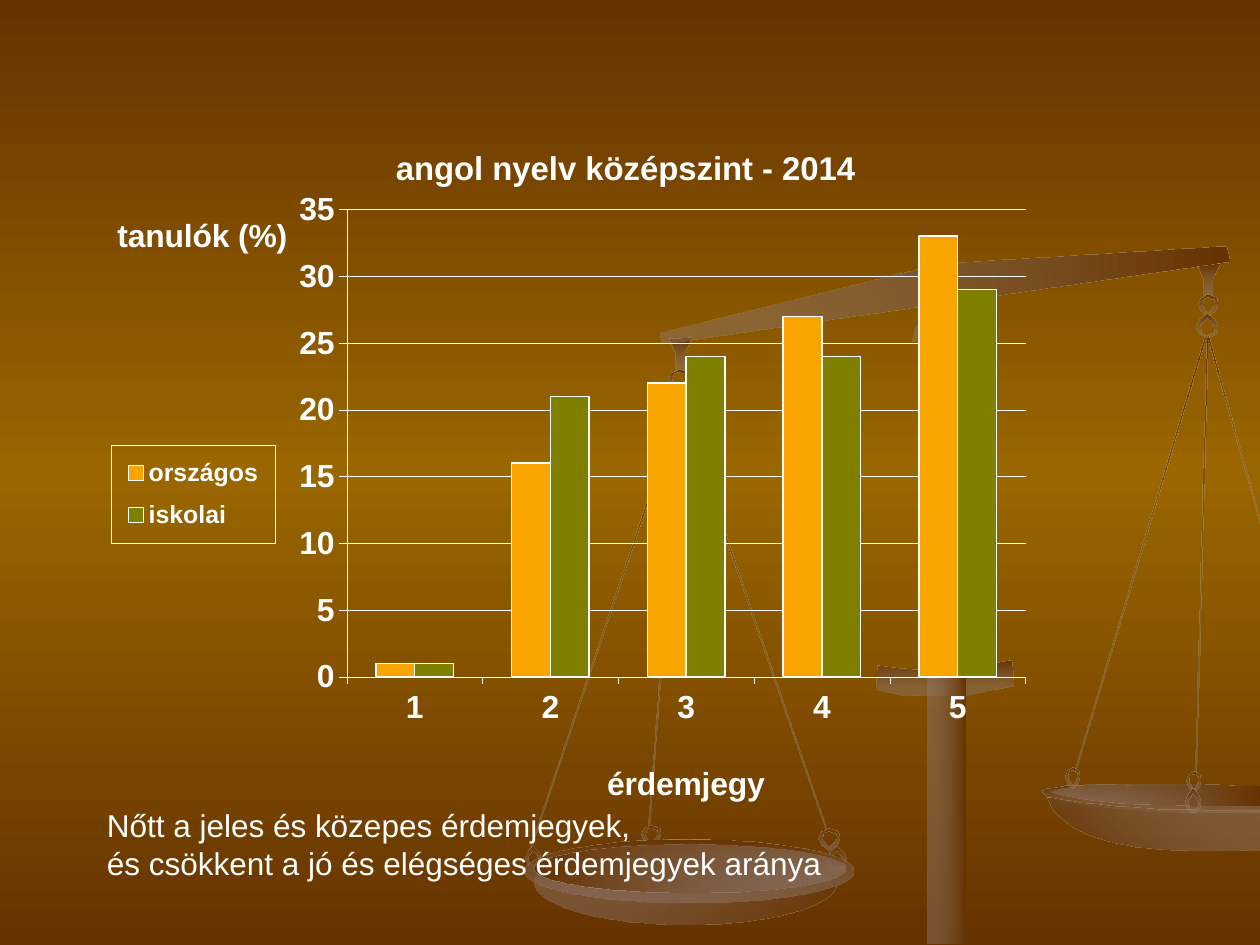
from copy import deepcopy
from dataclasses import dataclass

from lxml.etree import SubElement
from pptx import Presentation
from pptx.chart.data import CategoryChartData
from pptx.dml.color import RGBColor
from pptx.enum.chart import XL_CHART_TYPE, XL_LEGEND_POSITION, XL_TICK_LABEL_POSITION, XL_TICK_MARK
from pptx.enum.shapes import MSO_SHAPE
from pptx.enum.text import MSO_AUTO_SIZE
from pptx.oxml import parse_xml
from pptx.oxml.ns import nsdecls, qn
from pptx.util import Cm, Pt


@dataclass(frozen=True)
class Theme:
    font: str = "Arial"
    text: str = "FFFFFF"
    dark: str = "663300"
    middle: str = "996600"
    light: str = "937F79"
    light_alpha: int = 40000
    national: str = "F8A500"
    school: str = "808000"
    chart_size: float = 15.5
    title_size: float = 18.8
    axis_size: float = 18.2
    legend_size: float = 14.2
    note_size: float = 18
    hairline: float = 0.21
    bar_line: float = 0.84


LINK_OUTER = [(.5, 1), (.85, .75), (1, .4), (.9, .15), (.5, 0), (.15, .15), (0, .45), (.15, .75)]
LINK_INNER = [(.5, .12), (.82, .25), (.85, .45), (.5, .82), (.18, .5), (.25, .2)]
HOOK = [(.18, 0), (0, .01), (.05, .13), (.05, .27), (.12, .27), (.12, .12)]

# Chain links: left, top, width, height, point at the bottom
LINKS = [
    (8.46, 6.09, .11, .17, True), (5.31, 2.93, .16, .17, True), (5.31, 3.07, .16, .19, False),
    (9.51, 2.34, .15, .17, True), (9.5, 2.49, .16, .19, False), (9.42, 6.12, .11, .17, True),
    (5.09, 6.55, .15, .16, True), (6.56, 6.72, .16, .19, False), (4.17, 6.72, .12, .16, False),
]
FRONT_LINKS = [(6.5, 6.58, .16, .17, True), (9.41, 6.26, .12, .19, False)]
# Cords: left, top, height, rotation
CORDS = [(9.04, 2.6, 3.6, 16.6), (9.53, 2.66, 3.47, 1.5), (9.79, 2.64, 1.53, 344.6),
         (5.98, 3.15, 3.53, 341), (4.79, 3.16, 3.68, 18.6), (5.27, 3.25, 3.31, 4.2)]
COLLAR = [(6.97, 5.28), (7.24, 5.31), (7.39, 5.31), (7.57, 5.3), (7.78, 5.28), (8.02, 5.24),
          (8.04, 5.44), (7.82, 5.48), (7.68, 5.51), (7.51, 5.52), (7.33, 5.52), (7.14, 5.51), (6.96, 5.47)]
PAN_RIM = [(9.58, 6.24), (8.97, 6.24), (8.75, 6.23), (8.46, 6.24), (8.31, 6.26), (8.27, 6.28),
           (8.32, 6.33), (8.42, 6.36), (8.63, 6.39), (8.94, 6.42), (9.35, 6.44), (9.58, 6.45),
           (10, 6.45), (10, 6.26), (9.8, 6.26)]
PAN_BOWL = [(8.31, 6.33), (8.35, 6.42), (8.42, 6.49), (8.52, 6.57), (8.65, 6.63), (8.82, 6.68),
            (9.03, 6.72), (9.28, 6.74), (9.57, 6.75), (9.8, 6.75), (10, 6.74), (10, 6.43),
            (9.53, 6.43), (9.18, 6.42), (8.86, 6.4), (8.57, 6.37)]
PAN_INSIDE = [(9.56, 6.23), (8.62, 6.23), (8.43, 6.26), (8.34, 6.28), (8.43, 6.31), (8.63, 6.34),
              (8.93, 6.37), (9.33, 6.38), (9.55, 6.39), (10, 6.39), (10, 6.24), (9.79, 6.24)]
BEAM = [(9.73, 1.96), (9.76, 2.08), (5.25, 2.73), (5.24, 2.64), (7.37, 2.12), (7.59, 2.09)]
POINTER = [(7.91, 5.39), (7.5, 2.8), (7.5, 2.76), (7.48, 2.68), (7.6, 2.65), (7.61, 2.74), (7.63, 2.77)]
HUB = [(7.52, 2.47), (7.63, 2.48), (7.72, 2.53), (7.77, 2.6), (7.79, 2.71), (7.24, 2.71),
       (7.26, 2.6), (7.32, 2.53), (7.4, 2.48)]


def length(inches):
    """Turn a place on the 10 by 7.5 inch grid into a length."""
    return Cm(inches * 2.54)


def colour(code):
    return RGBColor.from_string(code)


class Slide:
    def __init__(self, deck, theme):
        self.theme = theme
        self.page = deck.slides.add_slide(deck.slide_layouts[6])
        self.scale_art = self.page.shapes.add_group_shape().shapes

    def gradient(self, fill, element, colours, angle):
        """Spread the colours evenly; the angle runs clockwise."""
        fill.gradient()
        fill.gradient_angle = -angle % 360
        stop_list = next(element.iter(qn("a:gsLst")))
        while len(stop_list) < len(colours):
            stop_list.append(deepcopy(stop_list[-1]))
        for index, (stop, code) in enumerate(zip(fill.gradient_stops, colours)):
            stop.color.rgb = colour(code)
            stop.position = index / (len(colours) - 1)
        for tone in stop_list.iter(qn("a:srgbClr")):
            if tone.get("val") == self.theme.light:
                SubElement(tone, qn("a:alpha")).set("val", str(self.theme.light_alpha))

    def background(self):
        theme = self.theme
        fill = self.page.background.fill
        self.gradient(fill, self.page.element, [theme.dark, theme.middle, theme.dark], 90)

    def metal(self, shape, angle, from_light):
        tones = [self.theme.dark, self.theme.light]
        self.gradient(shape.fill, shape.element, tones[::-1] if from_light else tones, angle)
        shape.line.fill.background()
        shape.shadow.inherit = False

    def preset(self, kind, box, angle=90, from_light=False, rotation=0):
        shape = self.scale_art.add_shape(kind, *map(length, box))
        shape.rotation = rotation
        self.metal(shape, angle, from_light)

    def outline(self, *contours, angle=90, from_light=False):
        contours = [[(length(x), length(y)) for x, y in points] for points in contours]
        builder = self.scale_art.build_freeform(*contours[0][0])
        builder.add_line_segments(contours[0][1:])
        for points in contours[1:]:
            builder.move_to(*points[0])
            builder.add_line_segments(points[1:])
        self.metal(builder.convert_to_shape(), angle, from_light)

    def link(self, left, top, width, height, point_down):
        self.outline(*[[(left + x * width, top + (y if point_down else 1 - y) * height)
                        for x, y in points] for points in (LINK_OUTER, LINK_INNER)])

    def style_font(self, font, size, bold=True):
        font.name, font.size, font.bold = self.theme.font, Pt(size), bold
        font.color.rgb = colour(self.theme.text)

    def style_line(self, line, width):
        line.color.rgb, line.width = colour(self.theme.text), Pt(width)

    def chart_title(self, title, text, size):
        span = title.text_frame.paragraphs[0].add_run()
        span.text = text
        self.style_font(span.font, size)

    def place(self, element, **fractions):
        """Fix an element of the chart at fractions of the chart's size."""
        for old in element.findall(qn("c:layout")):
            element.remove(old)
        target = '<c:layoutTarget val="inner"/>' if element.tag == qn("c:plotArea") else ""
        modes = "".join(f'<c:{side}Mode val="edge"/>' for side in "xy")
        values = "".join(f'<c:{key} val="{value}"/>' for key, value in fractions.items())
        layout = parse_xml(f'<c:layout {nsdecls("c")}><c:manualLayout>{target}{modes}{values}'
                           '</c:manualLayout></c:layout>')
        overlay = element.find(qn("c:overlay"))
        if overlay is None:
            element.insert(0, layout)
        else:
            overlay.addprevious(layout)

    def column_chart(self, box, title, axis_titles, categories, series):
        theme = self.theme
        data = CategoryChartData()
        data.categories = categories
        for name, values, _ in series:
            data.add_series(name, values)
        chart = self.page.shapes.add_chart(XL_CHART_TYPE.COLUMN_CLUSTERED, *map(length, box), data).chart
        self.style_font(chart.font, theme.chart_size)
        self.chart_title(chart.chart_title, title, theme.title_size)
        for axis, text in zip((chart.category_axis, chart.value_axis), axis_titles):
            self.chart_title(axis.axis_title, text, theme.axis_size)
            self.style_font(axis.tick_labels.font, theme.axis_size)
            self.style_line(axis.format.line, theme.hairline)
            axis.major_tick_mark = XL_TICK_MARK.OUTSIDE
        chart.category_axis.tick_label_position = XL_TICK_LABEL_POSITION.LOW
        chart.value_axis.minimum_scale, chart.value_axis.maximum_scale = 0, 35
        chart.value_axis.major_unit = 5
        self.style_line(chart.value_axis.major_gridlines.format.line, theme.hairline)
        plot = chart.plots[0]
        plot.gap_width, plot.overlap, plot.vary_by_categories = 150, 0, False
        for bars, (_, _, code) in zip(plot.series, series):
            bars.format.fill.solid()
            bars.format.fill.fore_color.rgb = colour(code)
            self.style_line(bars.format.line, theme.bar_line)
        chart.has_legend = True
        chart.legend.position = XL_LEGEND_POSITION.RIGHT
        chart.legend.include_in_layout = False
        self.style_font(chart.legend.font, theme.legend_size)
        self.arrange(chart)

    def arrange(self, chart):
        root = chart._chartSpace
        spots = [(.3, .09), (.52, .9), (.01, .18)]
        for title, (x, y) in zip(root.iter(qn("c:title")), spots):
            self.place(title, x=x, y=y)
            next(title.iter(qn("a:bodyPr"))).set("rot", "0")
        self.place(next(root.iter(qn("c:plotArea"))), x=.255, y=.181, w=.707, h=.614)
        legend = next(root.iter(qn("c:legend")))
        self.place(legend, x=.01, y=.49, w=.17, h=.13)
        frame = parse_xml(f'<c:spPr {nsdecls("c", "a")}><a:noFill/><a:ln w="{Pt(self.theme.hairline)}"><a:solidFill>'
                          f'<a:srgbClr val="{self.theme.text}"/></a:solidFill></a:ln></c:spPr>')
        legend.find(qn("c:overlay")).addnext(frame)

    def note(self, box, lines):
        frame = self.page.shapes.add_textbox(*map(length, box)).text_frame
        frame.word_wrap, frame.auto_size = False, MSO_AUTO_SIZE.SHAPE_TO_FIT_TEXT
        for index, line in enumerate(lines):
            para = frame.add_paragraph() if index else frame.paragraphs[0]
            span = para.add_run()
            span.text = line
            self.style_font(span.font, self.theme.note_size, bold=False)


def draw_scales(slide):
    bar, disc = MSO_SHAPE.RECTANGLE, MSO_SHAPE.OVAL
    slide.preset(bar, (7.34, 2.37, .34, .18))
    slide.preset(disc, (7.46, 2.06, .08, .08))
    for left, top, height, rotation in CORDS:
        slide.preset(bar, (left, top, .01, height), rotation=rotation)
    slide.outline(COLLAR)
    slide.outline(PAN_RIM)
    slide.outline(PAN_BOWL, angle=315)
    slide.outline(PAN_INSIDE, angle=0, from_light=True)
    for left, top in [(5.31, 2.68), (9.5, 2.09)]:
        slide.outline([(left + x, top + y) for x, y in HOOK])
    for link in LINKS:
        slide.link(*link)
    slide.outline(BEAM, angle=0, from_light=True)
    slide.preset(disc, (4.24, 6.66, 2.4, .68), 45, True)
    slide.preset(disc, (4.16, 6.66, 2.61, .5))
    slide.preset(disc, (4.24, 6.7, 2.47, .38), 0)
    for link in FRONT_LINKS:
        slide.link(*link)
    slide.preset(bar, (7.36, 3.08, .3, 4.41), 0, True)
    slide.preset(bar, (7.44, 2.68, .13, .42))
    slide.preset(MSO_SHAPE.ROUNDED_RECTANGLE, (7.33, 3.03, .36, .09))
    slide.outline(POINTER, angle=45, from_light=True)
    slide.outline(HUB, angle=0, from_light=True)


def main():
    deck = Presentation()
    deck.slide_width, deck.slide_height = Cm(25.4), Cm(19.05)
    theme = Theme()
    slide = Slide(deck, theme)
    slide.background()
    draw_scales(slide)
    slide.column_chart(
        (.81, .57, 7.62, 6.04), "angol nyelv középszint - 2014", ("érdemjegy", "tanulók (%)"),
        ["1", "2", "3", "4", "5"],
        [("országos", (1, 16, 22, 27, 33), theme.national), ("iskolai", (1, 21, 24, 24, 29), theme.school)])
    slide.note((.75, 6.35, 6.06, .71), ["Nőtt a jeles és közepes érdemjegyek,",
                                        "és csökkent a jó és elégséges érdemjegyek aránya"])
    deck.save("out.pptx")


if __name__ == "__main__":
    main()
